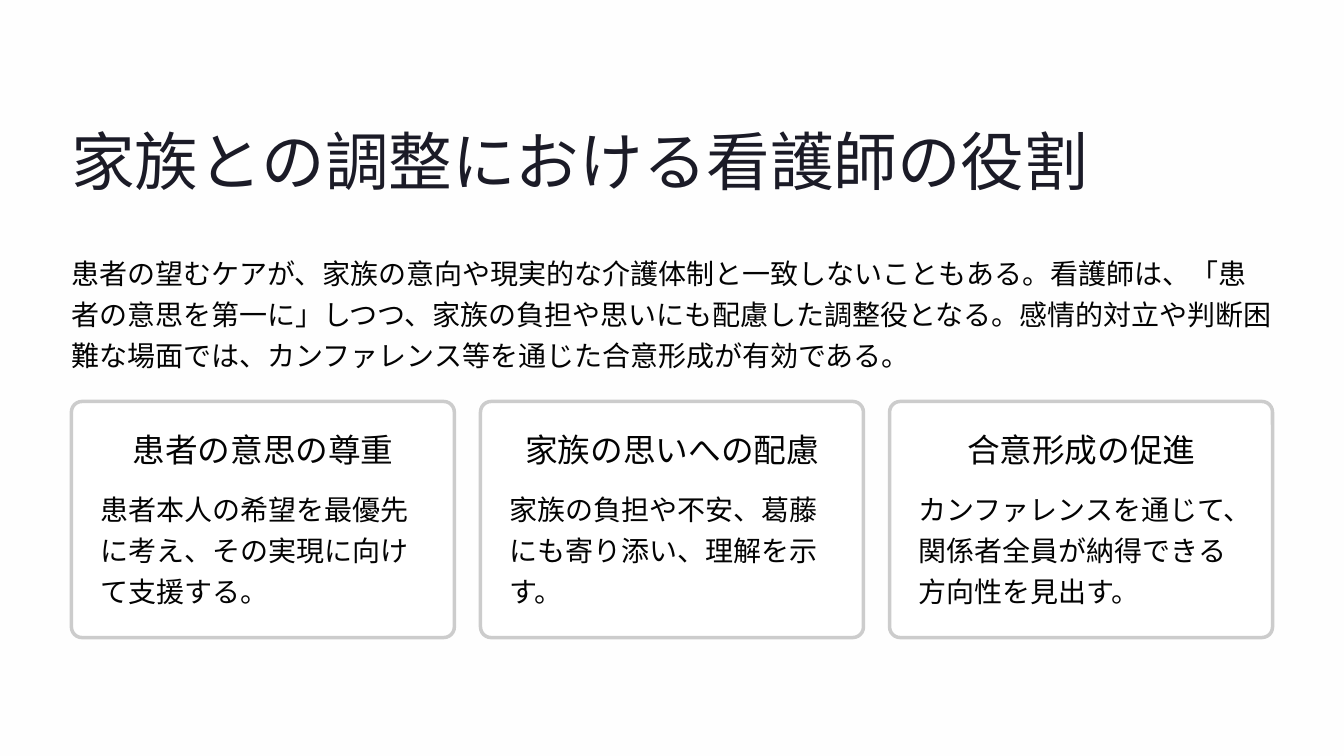
from pptx import Presentation
from pptx import util as u
from pptx.dml.color import RGBColor
from pptx.enum import shapes, text

PAPER = RGBColor(0xFE, 0xFE, 0xFE)
WHITE = RGBColor(0xFF, 0xFF, 0xFF)
BORDER = RGBColor(0xCC, 0xCC, 0xCC)
NAVY = RGBColor(0x1B, 0x1B, 0x27)
INK = RGBColor(0x03, 0x03, 0x03)

HEADING_FONT, BODY_FONT = "Inter", "Cabin"
MARGIN = 2.16
CONTENT_WIDTH = 36.32
CARD_WIDTH = 11.58

TITLE = "家族との調整における看護師の役割"
INTRO = (
    "患者の望むケアが、家族の意向や現実的な介護体制と一致しないこともある。"
    "看護師は、「患者の意思を第一に」しつつ、家族の負担や思いにも配慮した調整役となる。"
    "感情的対立や判断困難な場面では、カンファレンス等を通じた合意形成が有効である。"
)
ROLES = [
    ("患者の意思の尊重", "患者本人の希望を最優先に考え、その実現に向けて支援する。"),
    ("家族の思いへの配慮", "家族の負担や不安、葛藤にも寄り添い、理解を示す。"),
    ("合意形成の促進", "カンファレンスを通じて、関係者全員が納得できる方向性を見出す。"),
]


def add_text(page, box, words, font, size, leading, color=INK, align=None, wrap=True):
    """Place one paragraph in a box given in centimetres, without insets."""
    frame = page.shapes.add_textbox(*map(u.Cm, box)).text_frame
    frame.margin_left = frame.margin_right = frame.margin_top = frame.margin_bottom = 0
    frame.word_wrap = wrap
    para = frame.paragraphs[0]
    para.text = words
    para.alignment = align
    para.line_spacing = u.Pt(leading)
    para.font.name = font
    para.font.size = u.Pt(size)
    para.font.color.rgb = color


def add_header(page, box):
    """Place the title and the introduction below it."""
    left, top, width, height = box
    add_text(page, (left, top, 30.86, 2.41), TITLE, HEADING_FONT, 54.5, 68, NAVY, wrap=False)
    add_text(page, (left, top + 3.93, width, height - 3.93), INTRO, BODY_FONT, 24, 35)


def add_card(page, box, heading, body):
    """Place a bordered card with a centred heading and body text."""
    left, top, width, height = box
    card = page.shapes.add_shape(shapes.MSO_SHAPE.ROUNDED_RECTANGLE, *map(u.Cm, box))
    card.adjustments[0] = 0.045
    card.shadow.inherit = False
    card.fill.solid()
    card.fill.fore_color.rgb = WHITE
    card.line.color.rgb = BORDER
    card.line.width = u.Pt(3)
    add_text(page, (left + 0.97, top + 0.86, width - 1.93, 1.19), heading,
             HEADING_FONT, 28, 34, align=text.PP_ALIGN.CENTER, wrap=False)
    add_text(page, (left + 0.88, top + 2.54, width - 1.75, height - 3.43), body,
             BODY_FONT, 24, 35)


def add_cards(page, box):
    """Spread the role cards evenly over the width of the box."""
    left, top, width, height = box
    pitch = (width - CARD_WIDTH) / (len(ROLES) - 1)
    for index, (heading, body) in enumerate(ROLES):
        add_card(page, (left + index * pitch, top, CARD_WIDTH, height), heading, body)


def main():
    """Build the slide and save it."""
    deck = Presentation()
    deck.slide_width, deck.slide_height = u.Cm(40.64), u.Cm(22.86)
    page = deck.slides.add_slide(deck.slide_layouts[6])
    page.background.fill.solid()
    page.background.fill.fore_color.rgb = PAPER
    add_header(page, (MARGIN, 3.61, CONTENT_WIDTH, 7.64))
    add_cards(page, (MARGIN, 12.14, CONTENT_WIDTH, 7.14))
    deck.save("out.pptx")


if __name__ == "__main__":
    main()
